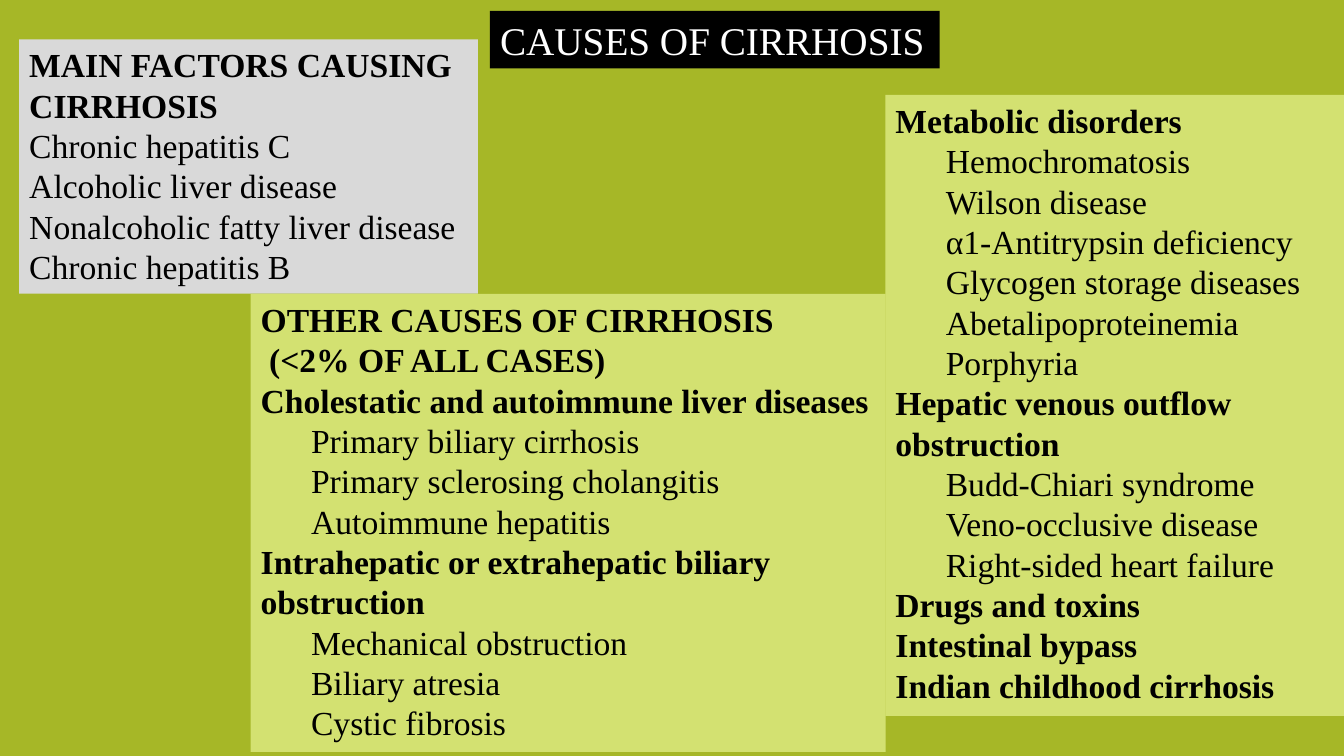
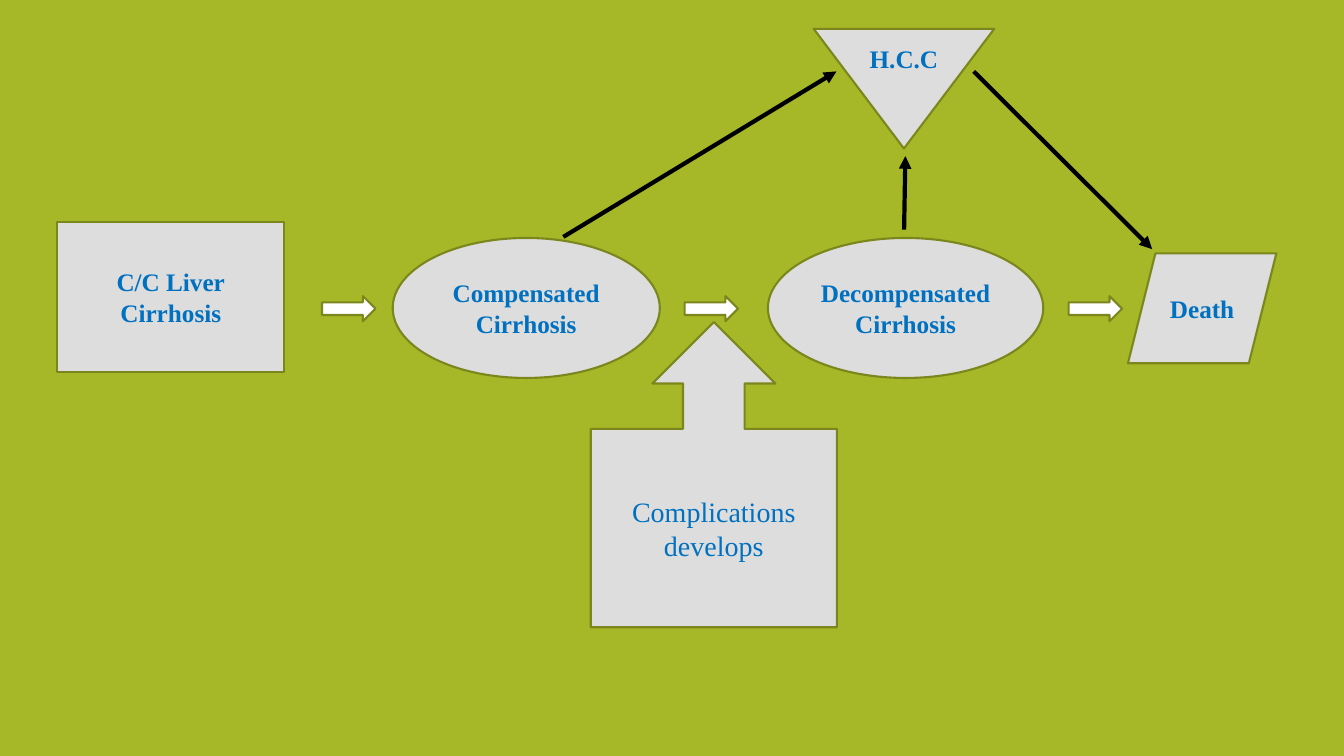
from lxml import etree
from pptx import Presentation
from pptx.dml.color import RGBColor
from pptx.enum.shapes import MSO_CONNECTOR, MSO_SHAPE
from pptx.enum.text import MSO_ANCHOR, MSO_AUTO_SIZE, PP_ALIGN
from pptx.oxml.ns import qn
from pptx.util import Pt

OLIVE = RGBColor(0xA6, 0xB7, 0x27)
DARK_OLIVE = RGBColor(0x7B, 0x87, 0x1D)
LIME = RGBColor(0xD3, 0xE1, 0x71)
GREY = RGBColor(0xD9, 0xD9, 0xD9)
PALE_GREY = RGBColor(0xDD, 0xDD, 0xDD)
BLUE = RGBColor(0x00, 0x70, 0xC0)
BLACK = RGBColor(0x00, 0x00, 0x00)
WHITE = RGBColor(0xFF, 0xFF, 0xFF)

FONT = "Times New Roman"
LEFT, CENTER = PP_ALIGN.LEFT, PP_ALIGN.CENTER
TOP, MIDDLE = MSO_ANCHOR.TOP, MSO_ANCHOR.MIDDLE
NO_FIT = MSO_AUTO_SIZE.NONE
STRAIGHT = MSO_CONNECTOR.STRAIGHT
RECTANGLE = MSO_SHAPE.RECTANGLE
OVAL = MSO_SHAPE.OVAL
PARALLELOGRAM = MSO_SHAPE.PARALLELOGRAM
MERGE = MSO_SHAPE.FLOWCHART_MERGE
RIGHT_ARROW = MSO_SHAPE.RIGHT_ARROW
UP_CALLOUT = MSO_SHAPE.UP_ARROW_CALLOUT

COMPARISON_LAYOUT = 4
BLANK_LAYOUT = 6
SPARE_PLACEHOLDER = 3
SUB_INDENT = 36

MAIN_FACTORS = [
    ("MAIN FACTORS CAUSING CIRRHOSIS", [
        "Chronic hepatitis C",
        "Alcoholic liver disease",
        "Nonalcoholic fatty liver disease",
        "Chronic hepatitis B",
    ]),
]
OTHER_CAUSES = [
    ("OTHER CAUSES OF CIRRHOSIS", []),
    (" (<2% OF ALL CASES)", []),
    ("Cholestatic and autoimmune liver diseases", [
        "Primary biliary cirrhosis",
        "Primary sclerosing cholangitis",
        "Autoimmune hepatitis",
    ]),
    ("Intrahepatic or extrahepatic biliary obstruction", [
        "Mechanical obstruction",
        "Biliary atresia",
        "Cystic fibrosis",
    ]),
]
FURTHER_CAUSES = [
    ("Metabolic disorders", [
        "Hemochromatosis",
        "Wilson disease",
        "α1-Antitrypsin deficiency",
        "Glycogen storage diseases",
        "Abetalipoproteinemia",
        "Porphyria",
    ]),
    ("Hepatic venous outflow obstruction", [
        "Budd-Chiari syndrome",
        "Veno-occlusive disease",
        "Right-sided heart failure",
    ]),
    ("Drugs and toxins", []),
    ("Intestinal bypass", []),
    ("Indian childhood cirrhosis", []),
]
CAUSE_LISTS = [
    (1, (13.7, 28.1, 327.6, 181.6), GREY, MAIN_FACTORS, 0),
    (2, (179, 210, 453.6, 327), LIME, OTHER_CAUSES, SUB_INDENT),
    (4, (632.4, 67.8, 327.6, 443.5), LIME, FURTHER_CAUSES, SUB_INDENT),
]

STAGES = [
    (RECTANGLE, (41, 158.5, 162, 107), ["C/C Liver", "Cirrhosis"], 18, True),
    (OVAL, (280.5, 170, 190.8, 100), ["Compensated", "Cirrhosis"], 18, True),
    (OVAL, (548.5, 170, 196.7, 100), ["Decompensated", "Cirrhosis"], 18, True),
    (PARALLELOGRAM, (805.7, 181, 106, 78.5), ["Death"], 18, True),
    (UP_CALLOUT, (422, 230, 175.8, 218), ["Complications develops"], 20, False),
    (MERGE, (581.2, 20.6, 129, 85.5), ["H.C.C"], 18, True),
]
STEP_ARROW_LEFTS = [230, 489, 763.3]
PROGRESSIONS = [
    ((402.4, 169.2), (597.5, 51)),
    ((695.5, 51), (823, 178)),
    ((645.8, 164), (646.7, 111.5)),
]


def place(box, bounds):
    box.left, box.top, box.width, box.height = map(Pt, bounds)


def set_fill(box, color):
    box.fill.solid()
    box.fill.fore_color.rgb = color


def add_span(para, text, size, color, bold=False):
    span = para.add_run()
    span.text = text
    span.font.name = FONT
    span.font.size = Pt(size)
    span.font.bold = bold
    span.font.color.rgb = color


def next_para(frame, first):
    return frame.paragraphs[0] if first else frame.add_paragraph()


def fill_title(slide, text, bounds):
    box = slide.shapes.title
    place(box, bounds)
    set_fill(box, BLACK)
    frame = box.text_frame
    frame.word_wrap = False
    frame.auto_size = NO_FIT
    frame.vertical_anchor = TOP
    para = frame.paragraphs[0]
    para.alignment = LEFT
    add_span(para, text, 28, WHITE)


def format_list_para(para, level, indent):
    para.level = level
    para.alignment = LEFT
    para.line_spacing = 1.0
    para.space_before = para.space_after = Pt(0)
    properties = para._p.get_or_add_pPr()
    properties.set("marL", str(Pt(indent)))
    properties.set("indent", "0")
    etree.SubElement(properties, qn("a:buNone"))


def fill_list(box, bounds, color, groups, sub_indent):
    place(box, bounds)
    set_fill(box, color)
    frame = box.text_frame
    frame.word_wrap = True
    frame.auto_size = NO_FIT
    frame.vertical_anchor = TOP
    lines = []
    for heading, items in groups:
        lines.append((heading, 0))
        lines.extend((item, 1) for item in items)
    for index, (text, level) in enumerate(lines):
        para = next_para(frame, index == 0)
        format_list_para(para, level, level * sub_indent)
        add_span(para, text, 24, BLACK, level == 0)


def add_outlined_shape(slide, kind, bounds, color):
    box = slide.shapes.add_shape(kind, *map(Pt, bounds))
    box.shadow.inherit = False
    set_fill(box, color)
    box.line.color.rgb = DARK_OLIVE
    box.line.width = Pt(1.5)
    return box


def add_stage(slide, kind, bounds, lines, size, bold):
    box = add_outlined_shape(slide, kind, bounds, PALE_GREY)
    frame = box.text_frame
    frame.word_wrap = True
    frame.vertical_anchor = MIDDLE
    for index, text in enumerate(lines):
        para = next_para(frame, index == 0)
        para.alignment = CENTER
        add_span(para, text, size, BLUE, bold)


def add_progression(slide, start, end):
    arrow = slide.shapes.add_connector(STRAIGHT, *map(Pt, start + end))
    arrow.line.color.rgb = BLACK
    arrow.line.width = Pt(3)
    etree.SubElement(arrow.line._get_or_add_ln(), qn("a:tailEnd"), type="triangle")
    etree.SubElement(arrow._element.spPr, qn("a:effectLst"))


def build_causes(deck):
    slide = deck.slides.add_slide(deck.slide_layouts[COMPARISON_LAYOUT])
    fill_title(slide, "CAUSES OF CIRRHOSIS", (350, 7.8, 321.2, 41))
    boxes = {box.placeholder_format.idx: box for box in slide.placeholders}
    for index, *content in CAUSE_LISTS:
        fill_list(boxes[index], *content)
    spare = boxes[SPARE_PLACEHOLDER]._element
    spare.getparent().remove(spare)


def build_progression(deck):
    slide = deck.slides.add_slide(deck.slide_layouts[BLANK_LAYOUT])
    for stage in STAGES:
        add_stage(slide, *stage)
    for left in STEP_ARROW_LEFTS:
        add_outlined_shape(slide, RIGHT_ARROW, (left, 211.5, 38.2, 18), WHITE)
    for start, end in PROGRESSIONS:
        add_progression(slide, start, end)


def main():
    deck = Presentation()
    deck.slide_width, deck.slide_height = Pt(960), Pt(540)
    set_fill(deck.slide_master.background, OLIVE)
    build_causes(deck)
    build_progression(deck)
    deck.save("out.pptx")


if __name__ == "__main__":
    main()
